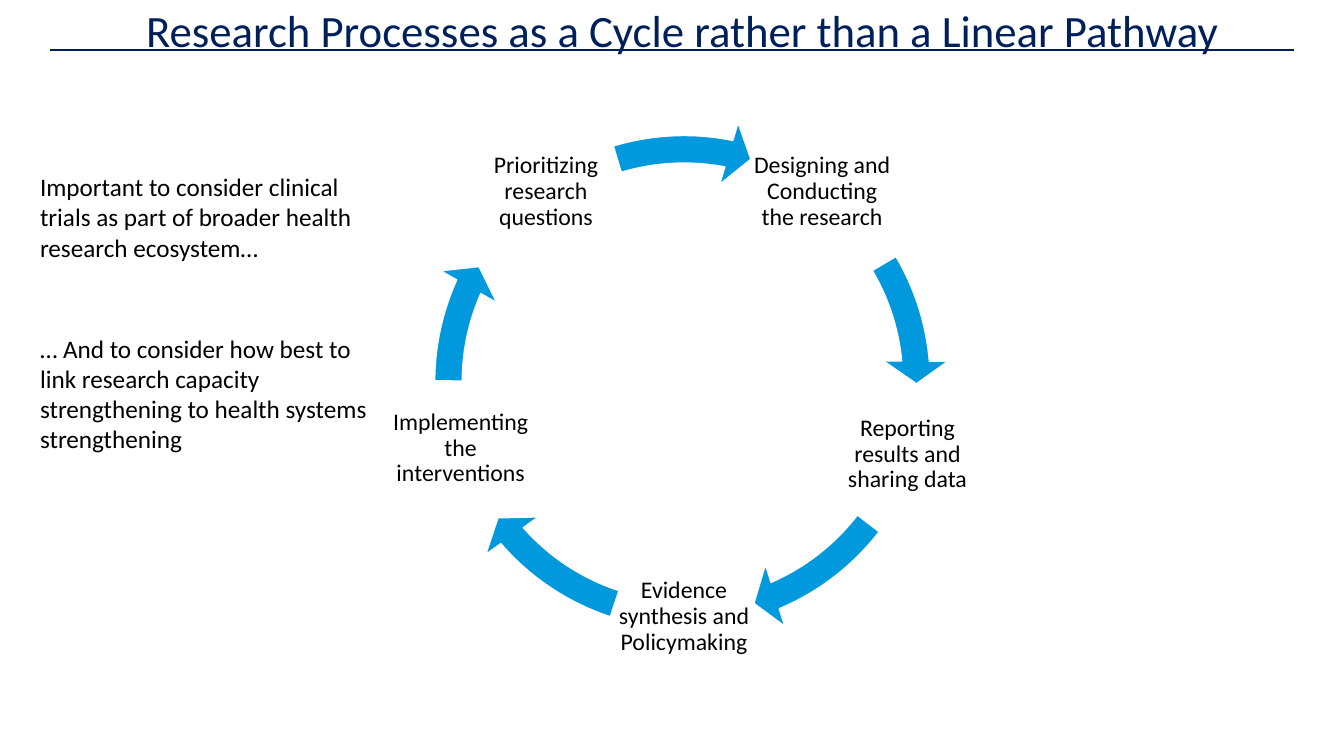
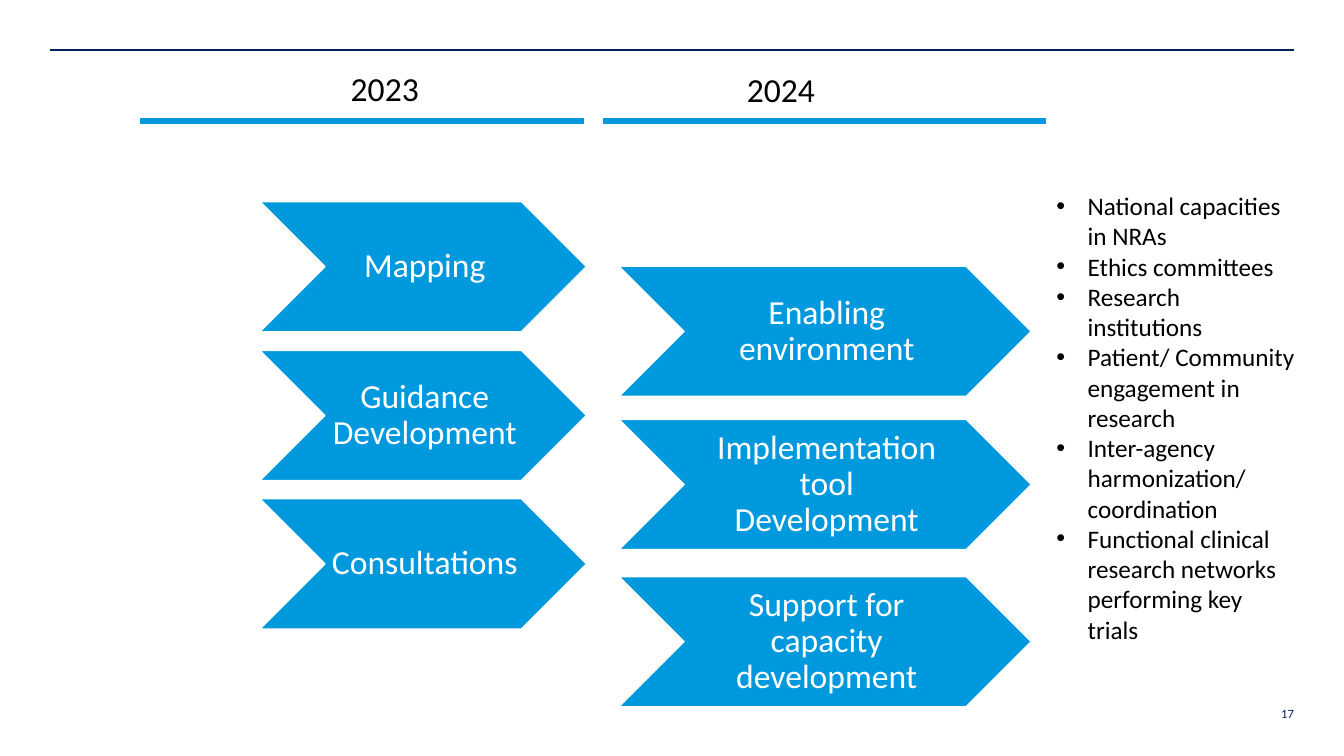
from dataclasses import dataclass
from math import cos, radians, sin

from pptx import Presentation
from pptx.dml.color import RGBColor
from pptx.enum.shapes import MSO_CONNECTOR, MSO_SHAPE
from pptx.enum.text import MSO_ANCHOR, MSO_AUTO_SIZE, PP_ALIGN
from pptx.oxml.xmlchemy import OxmlElement
from pptx.presentation import Presentation as Deck
from pptx.slide import Slide
from pptx.text.text import TextFrame
from pptx.util import Cm, Pt

STRAIGHT = MSO_CONNECTOR.STRAIGHT
CHEVRON, CIRCULAR_ARROW = MSO_SHAPE.CHEVRON, MSO_SHAPE.CIRCULAR_ARROW
TOP, MIDDLE = MSO_ANCHOR.TOP, MSO_ANCHOR.MIDDLE
LEFT, CENTER, RIGHT = PP_ALIGN.LEFT, PP_ALIGN.CENTER, PP_ALIGN.RIGHT
NO_AUTO_SIZE = MSO_AUTO_SIZE.NONE
TITLE_ONLY, BLANK = 5, 6


@dataclass(frozen=True)
class Theme:
    font: str = "Calibri"
    navy: RGBColor = RGBColor(0x00, 0x20, 0x5C)
    blue: RGBColor = RGBColor(0x00, 0x99, 0xDD)
    black: RGBColor = RGBColor(0x00, 0x00, 0x00)
    white: RGBColor = RGBColor(0xFF, 0xFF, 0xFF)
    title: float = 32
    heading: float = 24
    body: float = 18
    stage: float = 17
    number: float = 9
    tight: float = 0.9


@dataclass(frozen=True)
class Area:
    left: float
    top: float
    width: float
    height: float

    def lengths(self) -> tuple[Cm, Cm, Cm, Cm]:
        return Cm(self.left), Cm(self.top), Cm(self.width), Cm(self.height)


@dataclass(frozen=True)
class Margins:
    left: float = 0.25
    top: float = 0.13
    right: float = 0.25
    bottom: float = 0.13


@dataclass(frozen=True)
class TextStyle:
    size: float
    color: RGBColor
    align: PP_ALIGN = LEFT
    anchor: MSO_ANCHOR = TOP
    spacing: float = 1.0
    margins: Margins = Margins()
    wrap: bool = True


@dataclass(frozen=True)
class Stage:
    label: str
    arrow_start: float
    arrow_end: float
    label_rise: float = 0
    arrow_right: float = 0
    arrow_down: float = 0


@dataclass(frozen=True)
class YearColumn:
    year: str
    year_left: float
    year_top: float
    rule_left: float
    left: float
    width: float
    text_margin: float
    steps: tuple[tuple[str, float], ...]


THEME = Theme()
NO_MARGINS = Margins(0, 0, 0, 0)
TITLE_STYLE = TextStyle(THEME.title, THEME.navy, spacing=THEME.tight, margins=NO_MARGINS)
NOTE_STYLE = TextStyle(THEME.body, THEME.black)
YEAR_STYLE = TextStyle(THEME.heading, THEME.black, wrap=False)
NUMBER_STYLE = TextStyle(THEME.number, THEME.navy, RIGHT, margins=NO_MARGINS)
STAGE_STYLE = TextStyle(
    THEME.stage, THEME.black, CENTER, MIDDLE, THEME.tight, Margins(0.05, 0.05, 0.05, 0.05)
)

CYCLE_CENTER = (17.24, 9.62)
CYCLE_RADIUS = 5.92
STAGE_SIDE = 3.56
ARROW_SIDE = 13.34
ARROW_THICKNESS = 0.052
ARROW_HEAD_WIDTH = 0.061
ARROW_HEAD_ANGLE = 5.6
ADJUSTMENT_PER_DEGREE = 0.6
FIRST_STAGE_ANGLE = -54

STAGES = (
    Stage("Designing and Conducting the research", 329.43, 354.9),
    Stage("Reporting results and sharing data", 37.55, 66.92),
    Stage("Evidence synthesis and Policymaking", 108.2, 138.91, arrow_right=0.08, arrow_down=0.03),
    Stage("Implementing the interventions", 180.19, 204.11, label_rise=0.15, arrow_right=-0.08),
    Stage("Prioritizing research questions", 253.3, 281.11),
)

NOTES = (
    (
        "Important to consider clinical trials as part of broader health research ecosystem…",
        Area(0.76, 4.19, 8.97, 2.57),
    ),
    (
        "… And to consider how best to link research capacity strengthening "
        "to health systems strengthening",
        Area(0.76, 8.26, 8.97, 3.33),
    ),
)

CHEVRON_HEIGHT = 3.28
YEAR_RULE_TOP = 3.05
YEAR_RULE_WIDTH = 11.18
COLUMNS = (
    YearColumn(
        "2023", 8.59, 1.57, 3.53, 6.55, 8.23, 0,
        (("Mapping", 5.08), ("Guidance Development", 8.83), ("Consultations", 12.57)),
    ),
    YearColumn(
        "2024", 18.57, 1.6, 15.19, 15.6, 10.39, 0.44,
        (
            ("Enabling environment", 6.71),
            ("Implementation tool Development", 10.57),
            ("Support for capacity development", 14.53),
        ),
    ),
)

FOCUS_AREAS = (
    "National capacities in NRAs",
    "Ethics committees",
    "Research institutions",
    "Patient/ Community engagement in research",
    "Inter-agency harmonization/ coordination",
    "Functional clinical research networks performing key trials",
)


def write(frame: TextFrame, text: str, style: TextStyle) -> None:
    frame.text = text
    frame.auto_size = NO_AUTO_SIZE
    frame.word_wrap = style.wrap
    frame.vertical_anchor = style.anchor
    frame.margin_left = Cm(style.margins.left)
    frame.margin_top = Cm(style.margins.top)
    frame.margin_right = Cm(style.margins.right)
    frame.margin_bottom = Cm(style.margins.bottom)
    for para in frame.paragraphs:
        para.alignment = style.align
        para.line_spacing = style.spacing
        for span in para.runs:
            span.font.name = THEME.font
            span.font.size = Pt(style.size)
            span.font.color.rgb = style.color


def add_text(page: Slide, text: str, area: Area, style: TextStyle) -> TextFrame:
    box = page.shapes.add_textbox(*area.lengths())
    write(box.text_frame, text, style)
    return box.text_frame


def add_bullets(frame: TextFrame, indent: float) -> None:
    for para in frame.paragraphs:
        properties = para._p.get_or_add_pPr()
        properties.set("marL", str(Cm(indent)))
        properties.set("indent", str(-Cm(indent)))
        bullet_font = OxmlElement("a:buFont")
        bullet_font.set("typeface", "Arial")
        bullet = OxmlElement("a:buChar")
        bullet.set("char", "•")
        properties.extend((bullet_font, bullet))


def add_rule(page: Slide, left: float, top: float, width: float, color: RGBColor, weight: float):
    rule = page.shapes.add_connector(STRAIGHT, Cm(left), Cm(top), Cm(left + width), Cm(top))
    rule.line.color.rgb = color
    rule.line.width = Pt(weight)
    rule.element.spPr.append(OxmlElement("a:effectLst"))
    return rule


def add_blue_shape(page: Slide, kind: MSO_SHAPE, area: Area):
    shape = page.shapes.add_shape(kind, *area.lengths())
    shape.shadow.inherit = False
    shape.fill.solid()
    shape.fill.fore_color.rgb = THEME.blue
    shape.line.color.rgb = THEME.white
    shape.line.width = Pt(1)
    return shape


def square(center_x: float, center_y: float, side: float) -> Area:
    return Area(center_x - side / 2, center_y - side / 2, side, side)


def add_stage(page: Slide, stage: Stage, angle: float) -> None:
    center_x, center_y = CYCLE_CENTER
    label_x = center_x + CYCLE_RADIUS * cos(radians(angle))
    label_y = center_y + CYCLE_RADIUS * sin(radians(angle)) - stage.label_rise
    add_text(page, stage.label, square(label_x, label_y, STAGE_SIDE), STAGE_STYLE)
    arrow_area = square(center_x + stage.arrow_right, center_y + stage.arrow_down, ARROW_SIDE)
    arrow = add_blue_shape(page, CIRCULAR_ARROW, arrow_area)
    angles = (ARROW_HEAD_ANGLE, stage.arrow_end, stage.arrow_start)
    settings = (
        ARROW_THICKNESS,
        *(degrees * ADJUSTMENT_PER_DEGREE for degrees in angles),
        ARROW_HEAD_WIDTH,
    )
    for index, value in enumerate(settings):
        arrow.adjustments[index] = value


def add_column(page: Slide, column: YearColumn) -> None:
    add_rule(page, column.rule_left, YEAR_RULE_TOP, YEAR_RULE_WIDTH, THEME.blue, 4.75)
    year_area = Area(column.year_left, column.year_top, 2.24, 1.27)
    add_text(page, column.year, year_area, YEAR_STYLE)
    margins = Margins(column.text_margin + 0.08, 0.05, column.text_margin, 0.05)
    style = TextStyle(THEME.heading, THEME.white, CENTER, MIDDLE, THEME.tight, margins)
    for label, top in column.steps:
        area = Area(column.left, top, column.width, CHEVRON_HEIGHT)
        step = add_blue_shape(page, CHEVRON, area)
        write(step.text_frame, label, style)


def add_master_rule(deck: Deck, page: Slide) -> None:
    rule = add_rule(page, 1.27, 1.27, 31.33, THEME.navy, 1.5)
    rule.element.nvCxnSpPr.cNvPr.id = 20
    deck.slide_master.shapes.element.append(rule.element)


def build_cycle(deck: Deck) -> None:
    page = deck.slides.add_slide(deck.slide_layouts[TITLE_ONLY])
    add_master_rule(deck, page)
    title = page.shapes.title
    title.left, title.top, title.width, title.height = Area(3.68, 0.23, 29.21, 3.68).lengths()
    heading = "Research Processes as a Cycle rather than a Linear Pathway"
    write(title.text_frame, heading, TITLE_STYLE)
    for index, stage in enumerate(STAGES):
        add_stage(page, stage, FIRST_STAGE_ANGLE + index * 360 / len(STAGES))
    for text, area in NOTES:
        add_text(page, text, area, NOTE_STYLE)


def build_timeline(deck: Deck) -> None:
    page = deck.slides.add_slide(deck.slide_layouts[BLANK])
    for column in COLUMNS:
        add_column(page, column)
    focus_area = Area(26.37, 4.67, 6.55, 11.79)
    focus = add_text(page, "\n".join(FOCUS_AREAS), focus_area, NOTE_STYLE)
    add_bullets(focus, 0.79)
    add_text(page, "17", Area(31.55, 17.78, 1.06, 0.89), NUMBER_STYLE)


def main() -> None:
    deck = Presentation()
    deck.slide_width, deck.slide_height = Cm(33.87), Cm(19.05)
    build_cycle(deck)
    build_timeline(deck)
    deck.save("out.pptx")


if __name__ == "__main__":
    main()
